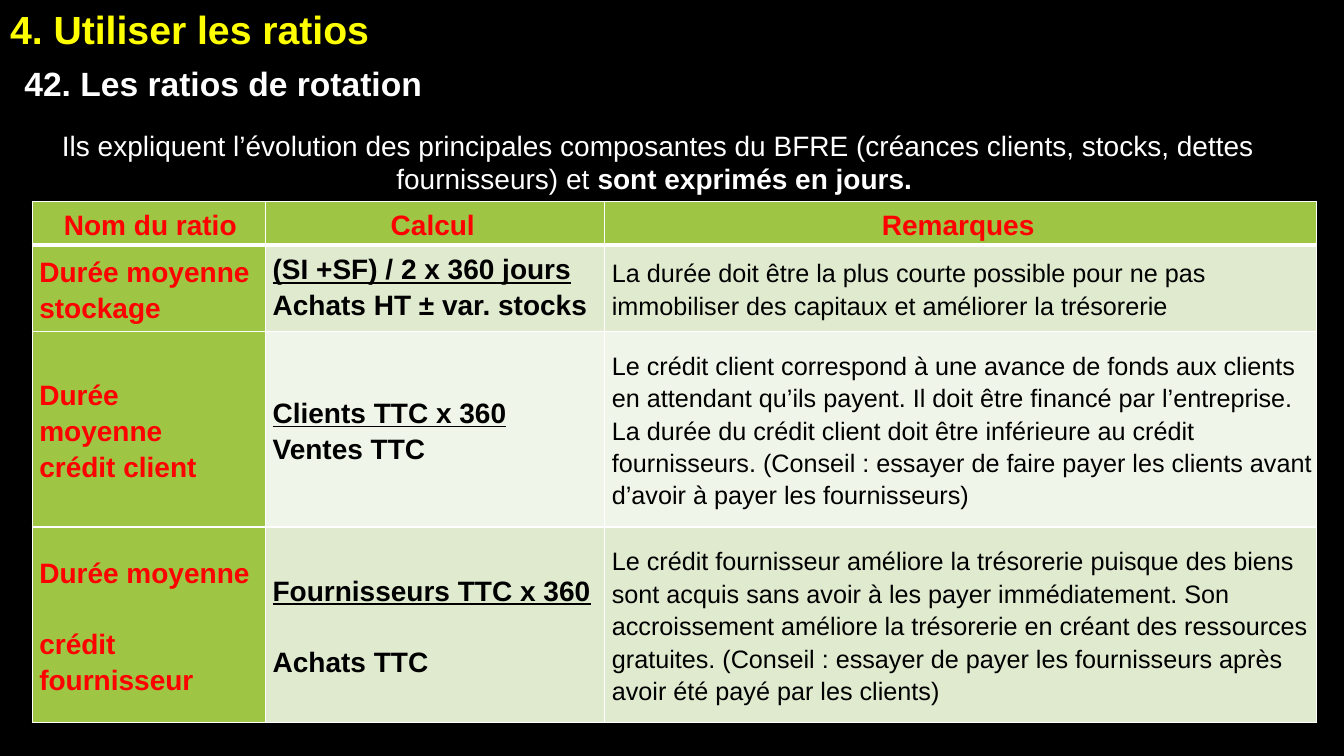
from lxml.etree import SubElement
from pptx import Presentation
from pptx.dml.color import RGBColor
from pptx.enum.text import MSO_ANCHOR as Anchor, MSO_AUTO_SIZE as AutoSize, PP_ALIGN as Align
from pptx.oxml import parse_xml
from pptx.oxml.ns import nsdecls, qn
from pptx.util import Cm, Pt

BLACK = RGBColor(0x00, 0x00, 0x00)
WHITE = RGBColor(0xFF, 0xFF, 0xFF)
YELLOW = RGBColor(0xFF, 0xFF, 0x00)
RED = RGBColor(0xFF, 0x00, 0x00)
GREEN = RGBColor(0x9E, 0xC5, 0x44)
BAND_DARK = RGBColor(0xDF, 0xEA, 0xCF)
BAND_LIGHT = RGBColor(0xF0, 0xF5, 0xE9)

TITLE = "4. Utiliser les ratios"
SUBTITLE = "42. Les ratios de rotation "
INTRO = [
    ("Ils expliquent l’évolution des principales composantes du BFRE (créances clients, "
     "stocks, dettes fournisseurs) et ", False),
    ("sont exprimés en jours. ", True),
]
HEADERS = [" Nom du ratio ", "Calcul ", "Remarques "]
# name lines, (numerator, denominator), remark
RATIOS = [
    (("Durée moyenne", "stockage"),
     ("(SI +SF) / 2 x 360 jours", "Achats HT ± var. stocks"),
     "La durée doit être la plus courte possible pour ne pas immobiliser des capitaux "
     "et améliorer la trésorerie"),
    (("Durée moyenne", "crédit client"),
     ("Clients TTC x 360", "Ventes TTC"),
     "Le crédit client correspond à une avance de fonds aux clients en attendant qu’ils "
     "payent. Il doit être financé par l’entreprise. La durée du crédit client doit être "
     "inférieure au crédit fournisseurs. (Conseil : essayer de faire payer les clients "
     "avant d’avoir à payer les fournisseurs)"),
    (("Durée moyenne", "crédit fournisseur"),
     ("Fournisseurs TTC x 360", "Achats TTC "),
     "Le crédit fournisseur améliore la trésorerie puisque des biens sont acquis sans "
     "avoir à les payer immédiatement. Son accroissement améliore la trésorerie en créant "
     "des ressources gratuites. (Conseil : essayer de payer les fournisseurs après avoir "
     "été payé par les clients)"),
]
COLUMN_WIDTHS = [5.88, 8.55, 17.93]
ROW_HEIGHTS = [1.09, 2.18, 4.93, 4.93]
LINE_SPACING = 1.15
WIDE_GAP = Pt(25.5)  # one empty line between the two lines of the last ratio


def add_run(paragraph, text, size, color, bold=True, underline=False):
    run = paragraph.add_run()
    run.text = text
    font = run.font
    font.name, font.size, font.bold = "Arial", Pt(size), bold
    font.underline = underline
    font.color.rgb = color


def place(shape, left, top, width, height):
    shape.left, shape.top = Cm(left), Cm(top)
    shape.width, shape.height = Cm(width), Cm(height)
    frame = shape.text_frame
    frame.word_wrap = True
    frame.auto_size = AutoSize.NONE
    frame.vertical_anchor = Anchor.TOP
    return frame


def format_paragraph(paragraph, align, before, after):
    """Set alignment and spacing, and drop the inherited bullet and indent."""
    paragraph.alignment = align
    paragraph.space_before, paragraph.space_after = Pt(before), Pt(after)
    properties = paragraph._p.get_or_add_pPr()
    properties.set("marL", "0")
    properties.set("indent", "0")
    SubElement(properties, qn("a:buNone"))


def set_borders(cell, row):
    widths = {"lnL": 1, "lnR": 1, "lnT": 3 if row == 1 else 1, "lnB": 3 if row == 0 else 1}
    properties = cell._tc.get_or_add_tcPr()
    for index, (side, width) in enumerate(widths.items()):
        properties.insert(index, parse_xml(
            f'<a:{side} {nsdecls("a")} w="{Pt(width)}"><a:solidFill>'
            f'<a:srgbClr val="{WHITE}"/></a:solidFill></a:{side}>'))


def fill_cell(cell, row, fill, lines, size, color, bold=True, align=Align.LEFT, fraction=False):
    cell.fill.solid()
    cell.fill.fore_color.rgb = fill
    set_borders(cell, row)
    cell.vertical_anchor = Anchor.MIDDLE
    cell.margin_left, cell.margin_right = Cm(0.18), Cm(0.1)
    cell.margin_top = cell.margin_bottom = 0
    frame = cell.text_frame
    for index, line in enumerate(lines):
        paragraph = frame.paragraphs[0] if index == 0 else frame.add_paragraph()
        paragraph.alignment = align
        paragraph.line_spacing = LINE_SPACING
        add_run(paragraph, line, size, color, bold, underline=fraction and index == 0)


presentation = Presentation()
presentation.slide_width, presentation.slide_height = Cm(33.87), Cm(19.05)
slide = presentation.slides.add_slide(presentation.slide_layouts[1])
slide.background.fill.solid()
slide.background.fill.fore_color.rgb = BLACK

title = place(slide.shapes.title, 0, 0, 27.8, 1.45).paragraphs[0]
format_paragraph(title, Align.LEFT, 3, 3)
add_run(title, TITLE, 28, YELLOW)

body = place(slide.placeholders[1], 0.36, 1.45, 32.46, 3.63)
subtitle = body.paragraphs[0]
format_paragraph(subtitle, Align.JUSTIFY, 6, 6)
add_run(subtitle, SUBTITLE, 24, WHITE)
intro = body.add_paragraph()
format_paragraph(intro, Align.CENTER, 12, 6)
for text, bold in INTRO:
    add_run(intro, text, 20, WHITE, bold)

table = slide.shapes.add_table(
    len(ROW_HEIGHTS), len(COLUMN_WIDTHS), Cm(0.81), Cm(5.08),
    Cm(sum(COLUMN_WIDTHS)), Cm(sum(ROW_HEIGHTS))).table
table.horz_banding = False
for column, width in zip(table.columns, COLUMN_WIDTHS):
    column.width = Cm(width)
for table_row, height in zip(table.rows, ROW_HEIGHTS):
    table_row.height = Cm(height)

for column, header in enumerate(HEADERS):
    fill_cell(table.cell(0, column), 0, GREEN, [header], 20, RED, align=Align.CENTER)
for row, (name, calculation, remark) in enumerate(RATIOS, start=1):
    band = BAND_DARK if row % 2 else BAND_LIGHT
    fill_cell(table.cell(row, 0), row, GREEN, name, 20, RED)
    fill_cell(table.cell(row, 1), row, band, calculation, 20, BLACK, fraction=True)
    fill_cell(table.cell(row, 2), row, band, [remark], 18, BLACK, bold=False)

table.cell(1, 1).text_frame.paragraphs[0].line_spacing = 1.0
table.cell(2, 0).margin_right = Cm(0.8)  # breaks the name after its first word
for column in (0, 1):
    table.cell(3, column).text_frame.paragraphs[0].space_after = WIDE_GAP

presentation.save("out.pptx")
